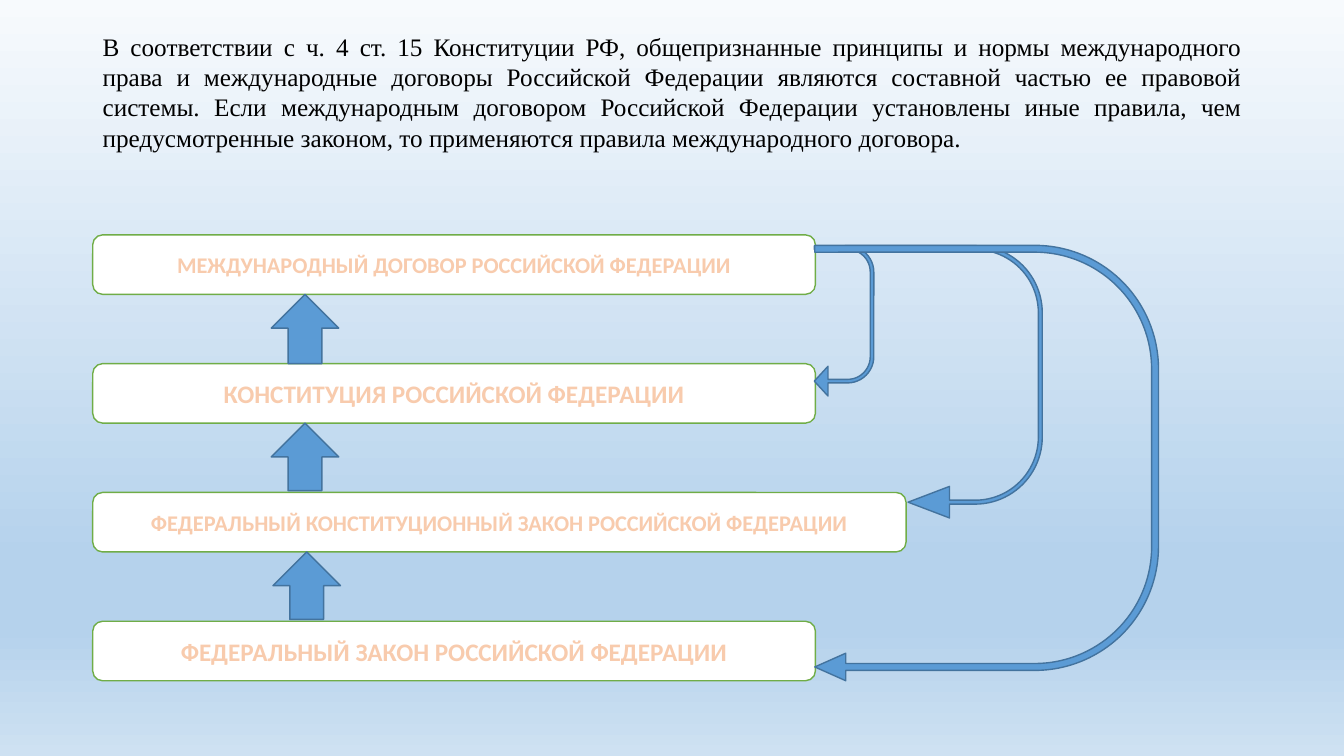
import copy

import lxml.etree
import pptx
import pptx.dml.color
import pptx.enum.shapes
import pptx.enum.text
import pptx.oxml.ns
import pptx.util

Pt = pptx.util.Pt
SHAPES = pptx.enum.shapes.MSO_SHAPE
ALIGN = pptx.enum.text.PP_ALIGN

INTRO = (
    "В соответствии с ч. 4 ст. 15 Конституции РФ, общепризнанные принципы и нормы "
    "международного права и международные договоры Российской Федерации являются "
    "составной частью ее правовой системы. Если международным договором Российской "
    "Федерации установлены иные правила, чем предусмотренные законом, то применяются "
    "правила международного договора."
)
LEFT, TOP, PITCH, HEIGHT = 66.25, 167.75, 92, 42.5
LEVELS = [
    ("МЕЖДУНАРОДНЫЙ ДОГОВОР РОССИЙСКОЙ ФЕДЕРАЦИИ", 16, 516.25),
    ("КОНСТИТУЦИЯ РОССИЙСКОЙ ФЕДЕРАЦИИ", 18, 516.25),
    ("ФЕДЕРАЛЬНЫЙ КОНСТИТУЦИОННЫЙ ЗАКОН РОССИЙСКОЙ ФЕДЕРАЦИИ", 16, 581),
    ("ФЕДЕРАЛЬНЫЙ ЗАКОН РОССИЙСКОЙ ФЕДЕРАЦИИ", 18, 516.25),
]
TURNS = [
    ((549.25, 208, 107.25, 42.5), (0.06, 0.25, 0.23, 0.44, 1)),
    ((576.75, 202.25, 194.5, 141), (0.02, 0.08, 0.21, 0.34, 0.68)),
    ((549.25, 208, 311, 245.5), (0.02, 0.04, 0.09, 0.36, 1)),
]
RISERS = [(193.75, 49.5), (193.75, 48.25), (195, 48.25)]


def color(value):
    return pptx.dml.color.RGBColor.from_string(value)


class Board:
    """Holds the style and the current slide and draws each kind of element."""

    box_style = {"fill": "FFFFFF", "line": "70AD47"}
    arrow_style = {"fill": "5B9BD5", "line": "43739E"}
    intro_font = {"name": "Times New Roman", "size": Pt(18)}
    label_font = {"name": "Calibri", "bold": True}

    def __init__(self, page):
        self.page = page

    def background(self, stops):
        fill = self.page.background.fill
        fill.gradient()
        fill.gradient_angle = 270
        stop_list = self.page.element.find(".//" + pptx.oxml.ns.qn("a:gsLst"))
        for _ in stops[2:]:
            stop_list.append(copy.deepcopy(stop_list[0]))
        for stop, (position, value) in zip(fill.gradient_stops, stops):
            stop.position = position
            stop.color.rgb = color(value)

    def add_words(self, frame, text, align, ink, font):
        frame.word_wrap = True
        para = frame.paragraphs[0]
        para.alignment = align
        span = para.add_run()
        span.text = text
        for name, value in font.items():
            setattr(span.font, name, value)
        span.font.color.rgb = color(ink)
        return span

    def intro(self, text, left, top, width, height):
        box = self.page.shapes.add_textbox(Pt(left), Pt(top), Pt(width), Pt(height))
        self.add_words(box.text_frame, text, ALIGN.JUSTIFY, "000000", self.intro_font)
        box.text_frame.auto_size = pptx.enum.text.MSO_AUTO_SIZE.SHAPE_TO_FIT_TEXT

    def shape(self, kind, place, style, adjustments=()):
        shape = self.page.shapes.add_shape(kind, *map(Pt, place))
        shape.shadow.inherit = False
        shape.fill.solid()
        shape.fill.fore_color.rgb = color(style["fill"])
        shape.line.color.rgb = color(style["line"])
        shape.line.width = Pt(1)
        for index, value in enumerate(adjustments):
            shape.adjustments[index] = value
        return shape

    def level(self, text, size, place):
        shape = self.shape(SHAPES.ROUNDED_RECTANGLE, place, self.box_style)
        shape.text_frame.vertical_anchor = pptx.enum.text.MSO_ANCHOR.MIDDLE
        font = {**self.label_font, "size": Pt(size)}
        span = self.add_words(shape.text_frame, text, ALIGN.CENTER, "F8CBAD", font)
        self.outline(span, "ED7D31", 1.75)

    def outline(self, span, value, width):
        qn = pptx.oxml.ns.qn
        line = lxml.etree.Element(qn("a:ln"), w=str(int(Pt(width))))
        solid = lxml.etree.SubElement(line, qn("a:solidFill"))
        lxml.etree.SubElement(solid, qn("a:srgbClr"), val=value)
        span._r.get_or_add_rPr().insert(0, line)

    def turn(self, place, adjustments):
        shape = self.shape(SHAPES.U_TURN_ARROW, place, self.arrow_style, adjustments)
        shape.rotation = 90

    def riser(self, place):
        self.shape(SHAPES.UP_ARROW, place, self.arrow_style)


def main():
    deck = pptx.Presentation()
    deck.slide_width, deck.slide_height = Pt(960), Pt(540)
    board = Board(deck.slides.add_slide(deck.slide_layouts[6]))
    board.background([(0, "F7FAFD"), (0.74, "B5D2EC"), (0.83, "B5D2EC"), (1, "CEE1F2")])
    board.intro(INTRO, LEFT, 18.75, 828, 94.5)
    for row, (text, size, width) in enumerate(LEVELS):
        board.level(text, size, (LEFT, TOP + row * PITCH, width, HEIGHT))
    for place, adjustments in TURNS:
        board.turn(place, adjustments)
    for row, (left, height) in enumerate(RISERS):
        board.riser((left, TOP + HEIGHT + row * PITCH, 48.25, height))
    deck.save("out.pptx")


if __name__ == "__main__":
    main()
